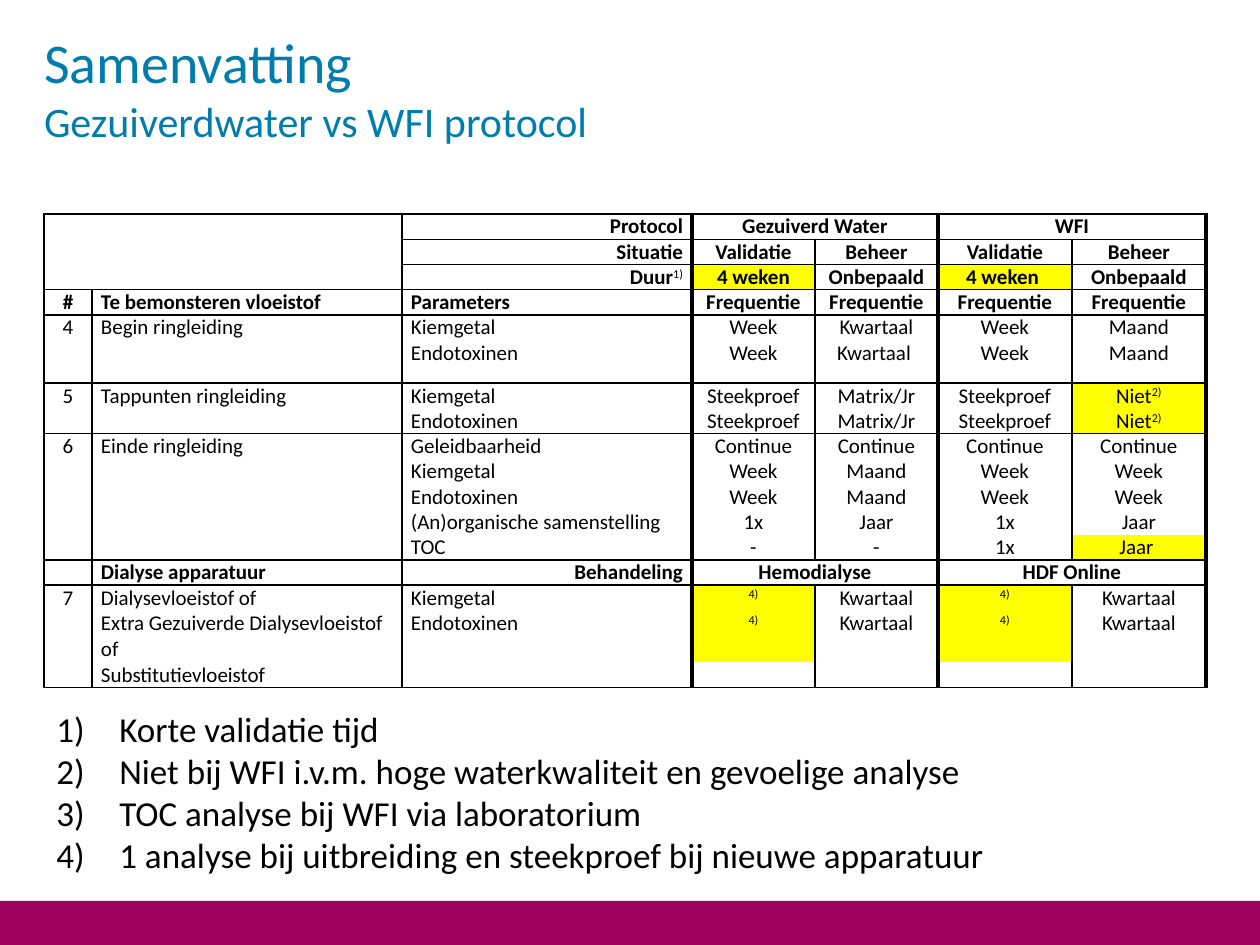
import lxml.etree
import pptx
import pptx.dml.color
import pptx.enum.shapes
import pptx.enum.text
import pptx.oxml.ns
import pptx.util

EMU_PER_PX = 914400 / 126
FONT = "Calibri"
COLORS = {"bar": "9E005D", "title": "007DAD", "text": "000000", "highlight": "FFFF00"}
ALIGN = pptx.enum.text.PP_ALIGN
qn = pptx.oxml.ns.qn

COLUMN_WIDTHS = [48, 310, 290, 123, 123, 134, 134]
ROW_HEIGHTS = [25] * 5 + [43] + [25] * 8 + [77, 25]
ROWS = [
    ["", "", "Protocol", "Gezuiverd Water", "", "WFI", ""],
    ["", "", "Situatie", "Validatie", "Beheer", "Validatie", "Beheer"],
    ["", "", "Duur^1)", "4 weken", "Onbepaald", "4 weken ", "Onbepaald"],
    ["#", "Te bemonsteren vloeistof", "Parameters"] + ["Frequentie"] * 4,
    ["4", "Begin ringleiding", "Kiemgetal", "Week", "Kwartaal", "Week", "Maand"],
    ["", "", "Endotoxinen", "Week", "Kwartaal ", "Week", "Maand"],
    ["5", "Tappunten ringleiding", "Kiemgetal", "Steekproef", "Matrix/Jr", "Steekproef", "Niet^2)"],
    ["", "", "Endotoxinen", "Steekproef", "Matrix/Jr", "Steekproef", "Niet^2)"],
    ["6", "Einde ringleiding", "Geleidbaarheid"] + ["Continue"] * 4,
    ["", "", "Kiemgetal", "Week", "Maand", "Week", "Week"],
    ["", "", "Endotoxinen", "Week", "Maand", "Week", "Week"],
    ["", "", "(An)organische samenstelling", "1x", "Jaar", "1x", "Jaar"],
    ["", "", "TOC", "-", "-", "1x", "Jaar "],
    ["", "Dialyse apparatuur", "Behandeling", "Hemodialyse", "", "HDF Online", ""],
    ["7", "Dialysevloeistof of\nExtra Gezuiverde Dialysevloeistof of", "Kiemgetal\nEndotoxinen",
     "^4)\n^4)", "Kwartaal\nKwartaal", "^4)\n^4)", "Kwartaal\nKwartaal"],
    ["", "Substitutievloeistof", "", "", "", "", ""],
]
MERGES = [(0, 0, 2, 1), (0, 3, 0, 4), (0, 5, 0, 6), (13, 3, 13, 4), (13, 5, 13, 6)]
HIGHLIGHTS = {(2, 3), (2, 5), (6, 6), (7, 6), (12, 6), (14, 3), (14, 5)}
BOLD_ROWS = {0, 1, 2, 3, 13}
RIGHT_ALIGNED_ROWS = {0, 1, 2, 13}
RULED_ROWS = {0, 1, 2, 3, 4, 6, 8, 13, 14, 16}
THICK_EDGES = {3, 5, 7}
NOTES = [
    "Korte validatie tijd",
    "Niet bij WFI i.v.m. hoge waterkwaliteit en gevoelige analyse",
    "TOC analyse bij WFI via laboratorium",
    "1 analyse bij uitbreiding en steekproef bij nieuwe apparatuur",
]


def px(length):
    return pptx.util.Emu(round(length * EMU_PER_PX))


def color(name):
    return pptx.dml.color.RGBColor.from_string(COLORS[name])


def format_run(run, size, color_name, bold=False):
    run.font.name = FONT
    run.font.size = pptx.util.Pt(size)
    run.font.bold = bold
    run.font.color.rgb = color(color_name)


def add_text_box(slide, box):
    shape = slide.shapes.add_textbox(*map(px, box))
    shape.text_frame.word_wrap = True
    return shape.text_frame


def add_bar(slide, box):
    bar = slide.shapes.add_shape(pptx.enum.shapes.MSO_SHAPE.RECTANGLE, *map(px, box))
    bar.shadow.inherit = False
    bar.fill.solid()
    bar.fill.fore_color.rgb = color("bar")
    bar.line.fill.background()


def add_title(slide, box):
    text_frame = add_text_box(slide, box)
    text_frame.margin_left = text_frame.margin_right = 0
    text_frame.margin_top = text_frame.margin_bottom = 0
    paragraph = text_frame.paragraphs[0]
    paragraph.text = "Samenvatting\vGezuiverdwater vs WFI protocol"
    for run, size in zip(paragraph.runs, (32, 24)):
        format_run(run, size, "title")


def set_border(cell, side, width):
    properties = cell._tc.get_or_add_tcPr()
    line = lxml.etree.SubElement(properties, qn(f"a:ln{side}"), w=str(pptx.util.Pt(width)))
    if width:
        fill = lxml.etree.SubElement(line, qn("a:solidFill"))
        lxml.etree.SubElement(fill, qn("a:srgbClr"), val=COLORS["text"])
    else:
        lxml.etree.SubElement(line, qn("a:noFill"))


def set_borders(cell, row, column):
    right_edge = column + (cell.span_width if cell.is_merge_origin else 1)
    bottom_edge = row + (cell.span_height if cell.is_merge_origin else 1)
    for side, edge in (("L", column), ("R", right_edge)):
        set_border(cell, side, 2.25 if edge in THICK_EDGES else 1)
    for side, edge in (("T", row), ("B", bottom_edge)):
        set_border(cell, side, 1 if edge in RULED_ROWS else 0)


def fill_cell(cell, text, alignment, bold):
    cell.margin_left = cell.margin_right = px(9)
    cell.margin_top = cell.margin_bottom = 0
    cell.text_frame.text = text.replace("^", "")
    for paragraph, line in zip(cell.text_frame.paragraphs, text.split("\n")):
        paragraph.alignment = alignment
        base, _, superscript = line.partition("^")
        paragraph.text = base
        if superscript:
            run = paragraph.add_run()
            run.text = superscript
            run.font._element.set("baseline", "30000")
        for run in paragraph.runs:
            format_run(run, 12, "text", bold and run.text != superscript)
        if not line:
            lxml.etree.SubElement(paragraph._p, qn("a:endParaRPr"), sz="1200")


def add_protocol_table(slide, box):
    frame = slide.shapes.add_table(len(ROWS), len(COLUMN_WIDTHS), *map(px, box))
    table = frame.table
    table.first_row = table.horz_banding = False
    for column, width in zip(table.columns, COLUMN_WIDTHS):
        column.width = px(width)
    for row, height in zip(table.rows, ROW_HEIGHTS):
        row.height = px(height)
    for top, left, bottom, right in MERGES:
        table.cell(top, left).merge(table.cell(bottom, right))
    for row, texts in enumerate(ROWS):
        for column, text in enumerate(texts):
            cell = table.cell(row, column)
            alignment = ALIGN.LEFT if column in (1, 2) else ALIGN.CENTER
            if column == 2 and row in RIGHT_ALIGNED_ROWS:
                alignment = ALIGN.RIGHT
            fill_cell(cell, text, alignment, row in BOLD_ROWS)
            if not cell.is_spanned:
                set_borders(cell, row, column)
            if (row, column) in HIGHLIGHTS:
                cell.fill.solid()
                cell.fill.fore_color.rgb = color("highlight")
            else:
                cell.fill.background()


def add_notes_list(slide, box):
    text_frame = add_text_box(slide, box)
    text_frame.auto_size = pptx.enum.text.MSO_AUTO_SIZE.SHAPE_TO_FIT_TEXT
    text_frame.text = "\n".join(NOTES)
    for paragraph in text_frame.paragraphs:
        properties = paragraph._p.get_or_add_pPr()
        properties.set("marL", str(px(63)))
        properties.set("indent", str(px(-63)))
        lxml.etree.SubElement(properties, qn("a:buFont"), typeface="+mj-lt")
        lxml.etree.SubElement(properties, qn("a:buAutoNum"), type="arabicParenR")
        format_run(paragraph.runs[0], 20, "text")


def main():
    presentation = pptx.Presentation()
    presentation.slide_width = px(1260)
    presentation.slide_height = px(945)
    slide = presentation.slides.add_slide(presentation.slide_layouts[6])
    add_bar(slide, (0, 901, 1260, 44))
    add_title(slide, (44, 28, 838, 135))
    add_protocol_table(slide, (44, 214, sum(COLUMN_WIDTHS), sum(ROW_HEIGHTS)))
    add_notes_list(slide, (44, 701, 1160, 183))
    presentation.save("out.pptx")


if __name__ == "__main__":
    main()
